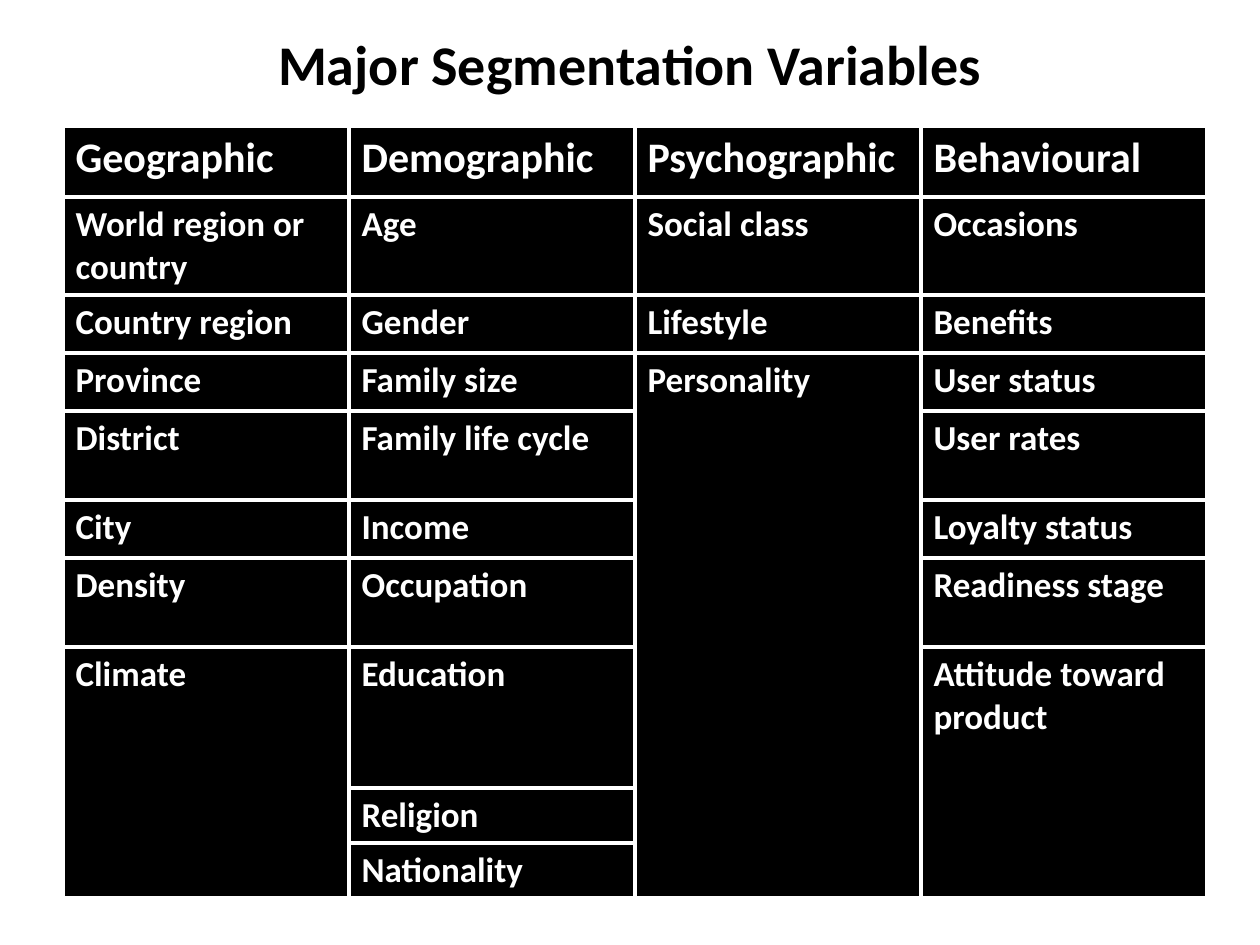
from lxml import etree
from pptx import Presentation
from pptx.dml.color import RGBColor
from pptx.enum.text import MSO_ANCHOR, PP_ALIGN
from pptx.oxml.ns import qn
from pptx.util import Pt

EMU_PER_PX = 914400 / 126
CENTER = PP_ALIGN.CENTER
MIDDLE = MSO_ANCHOR.MIDDLE
FONT = "Calibri"
COLORS = {"ink": "000000", "paper": "FFFFFF"}

ROW_HEIGHTS = [71, 98, 58, 58, 89, 58, 89, 141, 55, 55]
VARIABLES = {
    "Geographic": ["World region or country", "Country region", "Province",
                   "District", "City", "Density", "Climate"],
    "Demographic": ["Age", "Gender", "Family size", "Family life cycle", "Income",
                    "Occupation", "Education", "Religion", "Nationality"],
    "Psychographic": ["Social class", "Lifestyle", "Personality"],
    "Behavioural": ["Occasions", "Benefits", "User status", "User rates",
                    "Loyalty status", "Readiness stage", "Attitude toward product"],
}


def px(length):
    return round(length * EMU_PER_PX)


def style_font(paragraph, size, color):
    for run in paragraph.runs:
        run.font.name = FONT
        run.font.size = Pt(size)
        run.font.bold = True
        run.font.color.rgb = RGBColor.from_string(COLORS[color])


def add_title(slide, left, top, width, height):
    title = slide.shapes.add_textbox(px(left), px(top), px(width), px(height))
    frame = title.text_frame
    frame.word_wrap = True
    frame.vertical_anchor = MIDDLE
    frame.text = "Major Segmentation Variables"
    frame.paragraphs[0].alignment = CENTER
    style_font(frame.paragraphs[0], 32, "ink")


def style_cell(cell):
    properties = cell._tc.get_or_add_tcPr()
    for side in ("a:lnL", "a:lnR", "a:lnT", "a:lnB"):
        border = etree.SubElement(properties, qn(side), w=str(Pt(2.25)))
        border_fill = etree.SubElement(border, qn("a:solidFill"))
        etree.SubElement(border_fill, qn("a:srgbClr"), val=COLORS["paper"])
    cell.fill.solid()
    cell.fill.fore_color.rgb = RGBColor.from_string(COLORS["ink"])


def add_variables_table(slide, left, top, width):
    """Give each column its heading and variables; the last one fills the rows left."""
    row_count, column_count = len(ROW_HEIGHTS), len(VARIABLES)
    table = slide.shapes.add_table(row_count, column_count, px(left), px(top),
                                   px(width), px(sum(ROW_HEIGHTS))).table
    for row, height in zip(table.rows, ROW_HEIGHTS):
        row.height = px(height)
    for column in table.columns:
        column.width = px(width / column_count)
    for cell in table.iter_cells():
        style_cell(cell)

    for col, (heading, variables) in enumerate(VARIABLES.items()):
        for row, label in enumerate([heading, *variables]):
            cell = table.cell(row, col)
            cell.text_frame.text = label
            style_font(cell.text_frame.paragraphs[0], 20 if row else 24, "paper")
        if len(variables) < row_count - 1:
            table.cell(len(variables), col).merge(table.cell(row_count - 1, col))


def main():
    prs = Presentation()
    prs.slide_width, prs.slide_height = px(1260), px(945)
    slide = prs.slides.add_slide(prs.slide_layouts[6])
    add_title(slide, 63, 21, 1134, 84)
    add_variables_table(slide, 63, 126, 1144)
    prs.save("out.pptx")


if __name__ == "__main__":
    main()
